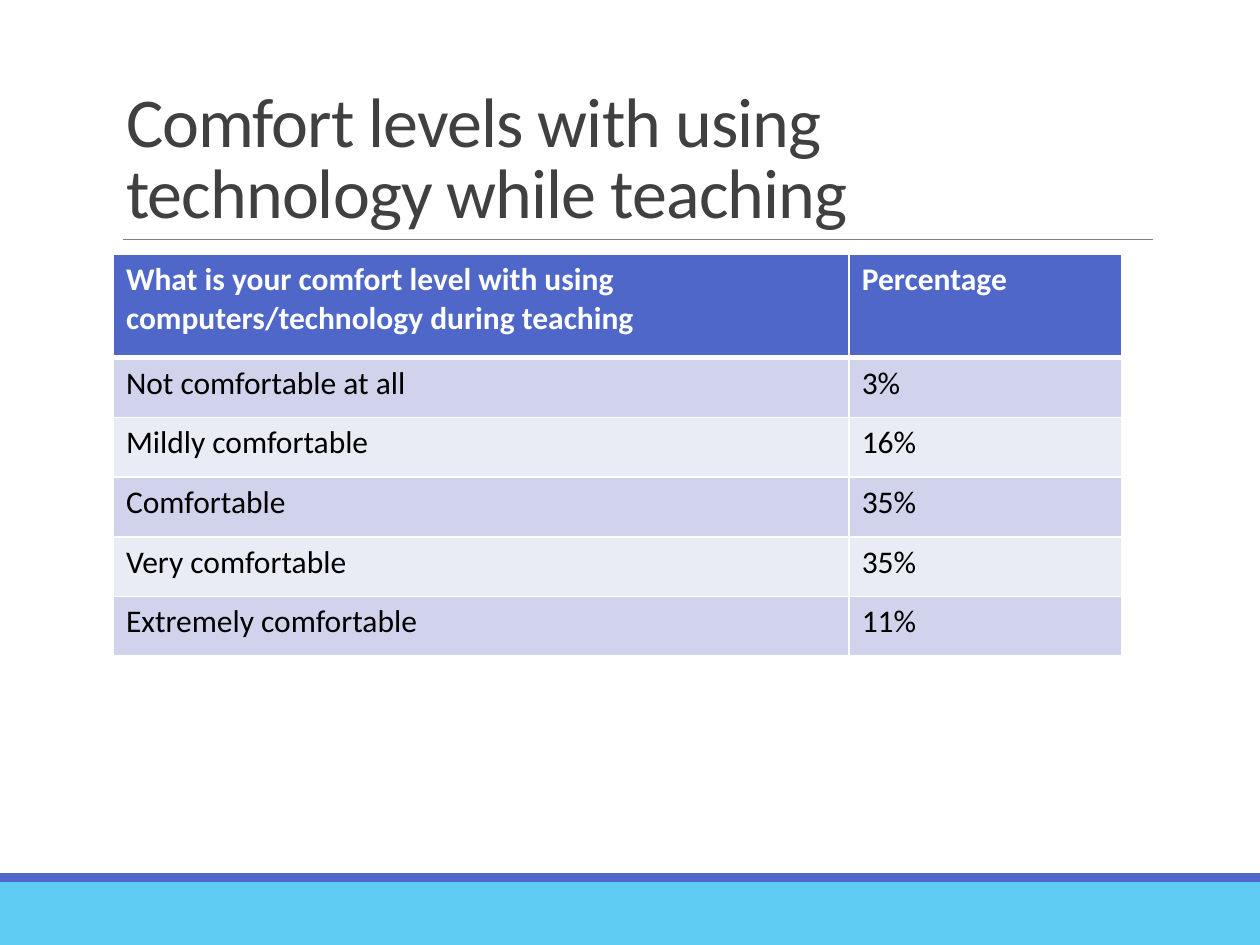
from lxml import etree
from pptx import Presentation, util as u
from pptx.dml.color import RGBColor
from pptx.enum import shapes, text
from pptx.oxml.ns import qn

W, H = 10, 7.5
LEFT, RIGHT = 0.09 * W, 0.915 * W
BLUE, SKY, WHITE = "4E67C8", "5ECCF3", "FFFFFF"
BANDS = ("D0D3EB", "E9EBF5")
ROWS = [
    ("What is your comfort level with using computers/technology during teaching",
     "Percentage"),
    ("Not comfortable at all", "3%"),
    ("Mildly comfortable", "16%"),
    ("Comfortable", "35%"),
    ("Very comfortable", "35%"),
    ("Extremely comfortable", "11%"),
]


def rgb(value):
    return RGBColor.from_string(value)


def inches(*values):
    return [u.Inches(v) for v in values]


def write(tf, content, size=18, color="000000", bold=False, spacing=None, tracking=None):
    tf.word_wrap = True
    p = tf.paragraphs[0]
    p.alignment = text.PP_ALIGN.LEFT
    p.line_spacing = spacing
    r = p.add_run()
    r.text = content
    r.font.name, r.font.size, r.font.bold = "Calibri", u.Pt(size), bold
    r.font.color.rgb = rgb(color)
    if tracking is not None:
        r._r.get_or_add_rPr().set("spc", str(round(tracking * 100)))


def add_band(s, box, color):
    sp = s.shapes.add_shape(shapes.MSO_SHAPE.RECTANGLE, *inches(*box))
    sp.shadow.inherit = False
    sp.fill.solid()
    sp.fill.fore_color.rgb = rgb(color)
    sp.line.fill.background()


def add_footer(s, box):
    """Stack a thin accent stripe on a broad band."""
    x, y, w, h = box
    stripe = 0.07
    add_band(s, (x, y + stripe, w, h - stripe), SKY)
    add_band(s, (x, y, w, stripe), BLUE)


def add_title(s, box, content):
    """Place the title above a thin rule at the foot of its box."""
    x, y, w, h = box
    rule = s.shapes.add_connector(
        shapes.MSO_CONNECTOR.STRAIGHT, *inches(x + 0.08, y + h, x + w, y + h))
    rule.line.color.rgb = rgb("808080")
    rule.line.width = u.Pt(0.5)
    etree.SubElement(rule._element.spPr, qn("a:effectLst"))

    sp = s.shapes.title
    sp.left, sp.top, sp.width, sp.height = inches(*box)
    tf = sp.text_frame
    tf.auto_size = text.MSO_AUTO_SIZE.NONE
    tf.vertical_anchor = text.MSO_ANCHOR.BOTTOM
    write(tf, content, size=40, color="404040", spacing=0.85, tracking=-0.5)


def set_borders(cell, **widths):
    tcPr = cell._tc.get_or_add_tcPr()
    for side in "LRTB":
        ln = etree.SubElement(tcPr, qn(f"a:ln{side}"), w=str(u.Pt(widths.get(side, 1))))
        fill = etree.SubElement(ln, qn("a:solidFill"))
        etree.SubElement(fill, qn("a:srgbClr"), val=WHITE)


def add_survey_table(s, box, rows, first_column=0.73, header_height=0.82):
    x, y, w, h = box
    table = s.shapes.add_table(len(rows), len(rows[0]), *inches(*box)).table
    for column, share in zip(table.columns, (first_column, 1 - first_column)):
        column.width = u.Inches(w * share)
    body_height = (h - header_height) / (len(rows) - 1)
    for i, values in enumerate(rows):
        header = i == 0
        table.rows[i].height = u.Inches(header_height if header else body_height)
        for j, value in enumerate(values):
            cell = table.cell(i, j)
            set_borders(cell, T=3 if i == 1 else 1, B=3 if header else 1)
            cell.fill.solid()
            cell.fill.fore_color.rgb = rgb(BLUE if header else BANDS[(i - 1) % 2])
            write(cell.text_frame, value, color=WHITE if header else "000000", bold=header)


def main():
    prs = Presentation()
    prs.slide_width, prs.slide_height = inches(W, H)
    s = prs.slides.add_slide(prs.slide_layouts[5])
    s.background.fill.solid()
    s.background.fill.fore_color.rgb = rgb(WHITE)
    add_footer(s, (0, 6.93, W, H - 6.93))
    add_title(s, (LEFT, 0.31, RIGHT - LEFT, 1.59),
              "Comfort levels with using technology while teaching")
    add_survey_table(s, (LEFT, 2.02, 0.8 * W, 3.19), ROWS)
    prs.save("out.pptx")


if __name__ == "__main__":
    main()
